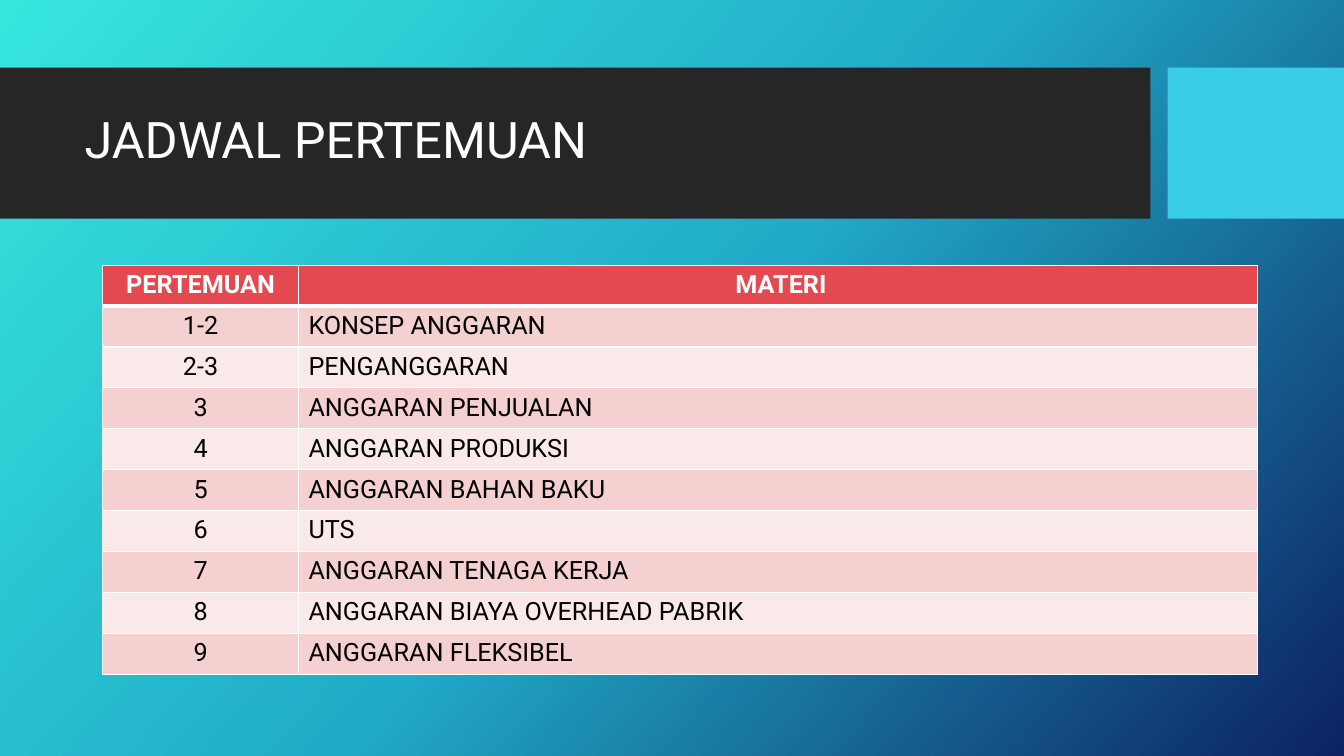
from copy import deepcopy

from lxml import etree
from pptx import Presentation
from pptx.dml.color import RGBColor
from pptx.enum.shapes import MSO_SHAPE
from pptx.enum.text import MSO_ANCHOR, PP_ALIGN
from pptx.oxml.ns import qn
from pptx.util import Inches, Pt

RECTANGLE = MSO_SHAPE.RECTANGLE
MIDDLE = MSO_ANCHOR.MIDDLE
LEFT, CENTER = PP_ALIGN.LEFT, PP_ALIGN.CENTER

WHITE = RGBColor(0xFF, 0xFF, 0xFF)
BLACK = RGBColor(0x00, 0x00, 0x00)
CHARCOAL = RGBColor(0x26, 0x26, 0x26)
CYAN = RGBColor(0x39, 0xCD, 0xE7)
RED = RGBColor(0xE4, 0x49, 0x51)
ROW_FILLS = (RGBColor(0xF5, 0xD0, 0xD0), RGBColor(0xFA, 0xE9, 0xE9))
BACKGROUND_STOPS = (
    (0, RGBColor(0x36, 0xE6, 0xDD)),
    (0.5, RGBColor(0x21, 0xAB, 0xC8)),
    (1, RGBColor(0x0C, 0x22, 0x63)),
)

TITLE_FORMAT = {"name": "Roboto", "size": Pt(36)}
HEADER_FORMAT = {"name": "Roboto", "size": Pt(18), "bold": True}
BODY_FORMAT = {"name": "Roboto", "size": Pt(18), "bold": False}

COLUMN_WIDTHS = (1.94, 9.51)
ROW_HEIGHT = 0.406
SCHEDULE = (
    ("PERTEMUAN", " MATERI"),
    ("1-2", "KONSEP ANGGARAN"),
    ("2-3", "PENGANGGARAN"),
    ("3", "ANGGARAN PENJUALAN"),
    ("4", "ANGGARAN PRODUKSI"),
    ("5", "ANGGARAN BAHAN BAKU"),
    ("6", "UTS"),
    ("7", "ANGGARAN TENAGA KERJA"),
    ("8", "ANGGARAN BIAYA OVERHEAD PABRIK"),
    ("9", "ANGGARAN FLEKSIBEL"),
)


def set_background(slide):
    fill = slide.background.fill
    fill.gradient()
    fill.gradient_angle = 360 - 42  # measured counter-clockwise
    # The default gradient has two stops; a third is needed
    stop_list = slide.element.find(".//" + qn("a:gsLst"))
    stop_list.append(deepcopy(stop_list[-1]))
    for stop, (position, color) in zip(fill.gradient_stops, BACKGROUND_STOPS):
        stop.position = position
        stop.color.rgb = color


def add_band(slide, left, width, color):
    shape = slide.shapes.add_shape(
        RECTANGLE, Inches(left), Inches(0.67), Inches(width), Inches(1.5))
    shape.shadow.inherit = False
    shape.fill.solid()
    shape.fill.fore_color.rgb = color
    shape.line.fill.background()


def write_text(paragraph, text, color, font_format):
    run = paragraph.add_run()
    run.text = text
    run.font.color.rgb = color
    for name, value in font_format.items():
        setattr(run.font, name, value)


def add_title(slide, text):
    box = slide.shapes.add_textbox(
        Inches(0.74), Inches(0.82), Inches(10.51), Inches(1.18))
    frame = box.text_frame
    frame.word_wrap = True
    frame.vertical_anchor = MIDDLE
    paragraph = frame.paragraphs[0]
    paragraph.line_spacing = 0.9
    write_text(paragraph, text, WHITE, TITLE_FORMAT)


def set_borders(cell, widths):
    """Draw white borders; widths holds points for left, right, top, bottom."""
    properties = cell._tc.get_or_add_tcPr()
    for index, (side, width) in enumerate(zip("LRTB", widths)):
        line = etree.Element(qn("a:ln" + side), w=str(Pt(width)))
        fill = etree.SubElement(line, qn("a:solidFill"))
        etree.SubElement(fill, qn("a:srgbClr"), val=str(WHITE))
        properties.insert(index, line)


def add_schedule(slide):
    table = slide.shapes.add_table(
        len(SCHEDULE), len(COLUMN_WIDTHS), Inches(1.02), Inches(2.63),
        Inches(sum(COLUMN_WIDTHS)), Inches(ROW_HEIGHT * len(SCHEDULE))).table
    for column, width in zip(table.columns, COLUMN_WIDTHS):
        column.width = Inches(width)

    for row_index, texts in enumerate(SCHEDULE):
        table.rows[row_index].height = Inches(ROW_HEIGHT)
        is_header = row_index == 0
        fill_color = RED if is_header else ROW_FILLS[(row_index - 1) % 2]
        text_color = WHITE if is_header else BLACK
        font_format = HEADER_FORMAT if is_header else BODY_FORMAT
        # A thick rule parts the header from the first body row
        widths = (1, 1, 3 if row_index == 1 else 1, 3 if is_header else 1)
        for column_index, text in enumerate(texts):
            cell = table.cell(row_index, column_index)
            cell.fill.solid()
            cell.fill.fore_color.rgb = fill_color
            set_borders(cell, widths)
            paragraph = cell.text_frame.paragraphs[0]
            centered = is_header or column_index == 0
            paragraph.alignment = CENTER if centered else LEFT
            write_text(paragraph, text, text_color, font_format)


def main():
    presentation = Presentation()
    presentation.slide_width = Inches(13.33)
    presentation.slide_height = Inches(7.5)
    slide = presentation.slides.add_slide(presentation.slide_layouts[6])

    # Background and title bands
    set_background(slide)
    add_band(slide, 0, 11.41, CHARCOAL)
    add_band(slide, 11.58, 1.75, CYAN)

    # Title and meeting schedule
    add_title(slide, "JADWAL PERTEMUAN")
    add_schedule(slide)

    presentation.save("out.pptx")


if __name__ == "__main__":
    main()
